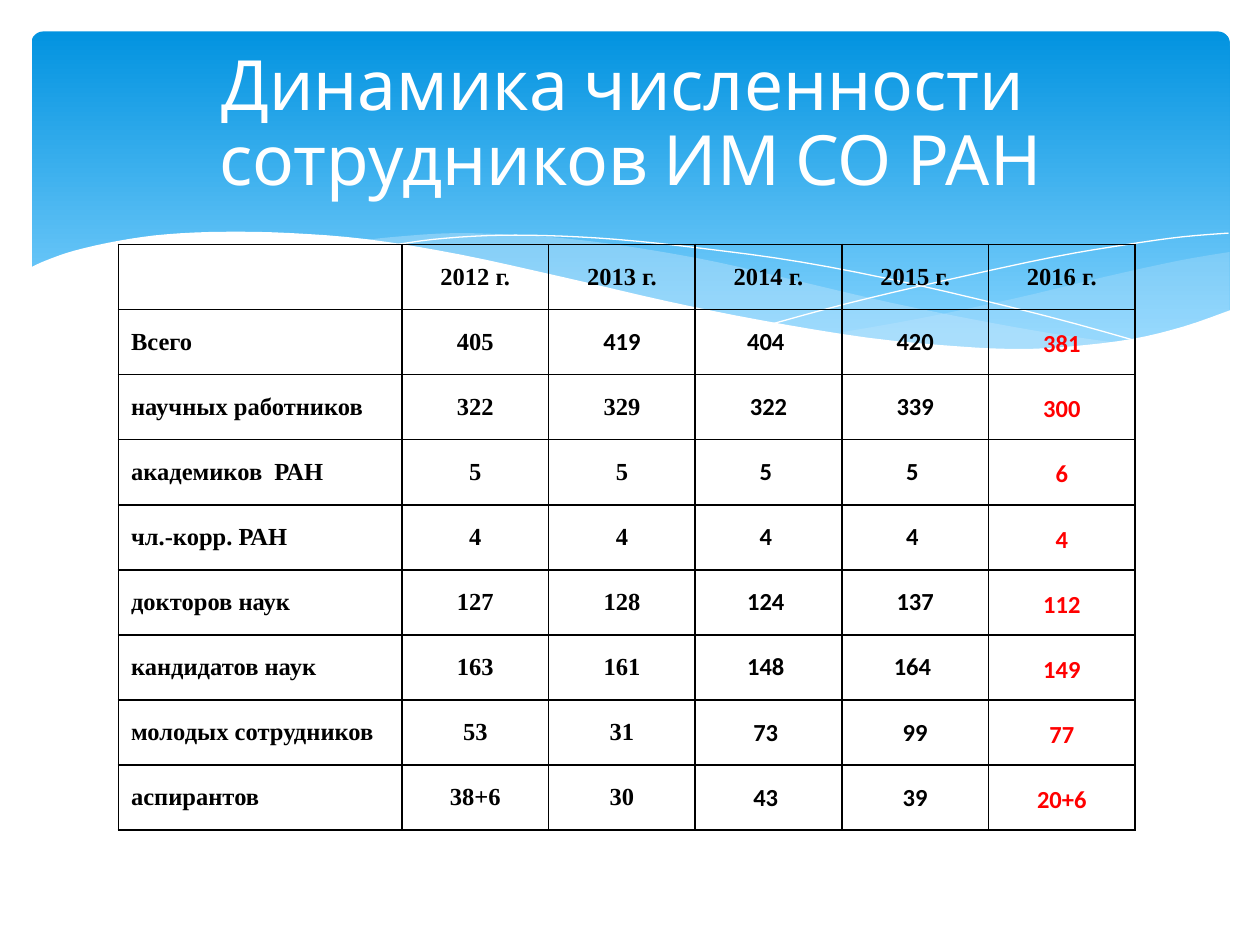
from dataclasses import dataclass

from lxml import etree
from pptx import Presentation
from pptx.dml.color import RGBColor
from pptx.enum.shapes import MSO_SHAPE
from pptx.enum.text import MSO_ANCHOR, PP_ALIGN
from pptx.oxml.ns import qn
from pptx.util import Inches, Pt


@dataclass(frozen=True)
class Theme:
    sky_top: str = "0293E0"
    sky_bottom: str = "83D3FE"
    wave: str = "C6E7FC"
    white: str = "FFFFFF"
    black: str = "000000"
    accent: str = "FF0000"
    title_font: str = "Cabin"
    label_font: str = "Times New Roman"
    value_font: str = "Calibri"
    title_size: float = 39.6
    table_size: float = 14


@dataclass(frozen=True)
class Box:
    left: float
    top: float
    width: float
    height: float

    def lengths(self):
        return [Inches(value) for value in (self.left, self.top, self.width, self.height)]


THEME = Theme()

# Knots of the smooth wave edges, in inches from the corner of the backdrop
RIGHT_WAVE = [
    [(9.76, 2), (9.35, 2.07), (8.76, 2.2), (8.05, 2.37), (7.29, 2.53), (6.61, 2.65)],
    [(6.61, 2.65), (7.19, 2.72), (7.69, 2.77), (8.24, 2.77), (8.72, 2.74),
     (9.21, 2.65), (9.49, 2.57), (9.76, 2.47)],
]
MIDDLE_WAVE = [
    [(8.93, 2.73), (8.37, 2.65), (7.75, 2.54), (7.06, 2.4), (6.29, 2.22), (5.69, 2.08),
     (5.14, 1.98), (4.65, 1.91), (4.2, 1.87), (3.61, 1.85), (3.13, 1.88), (2.86, 1.91)],
    [(2.86, 1.91), (3.42, 1.99), (4.04, 2.11), (4.91, 2.32), (5.66, 2.48), (6.34, 2.61),
     (6.95, 2.7), (7.48, 2.76), (8.07, 2.78), (8.57, 2.77), (8.93, 2.73)],
]
FALLING_LINE = [
    [(3.09, 1.95), (3.44, 1.9), (3.87, 1.87), (4.33, 1.87), (4.89, 1.9), (5.56, 1.97),
     (6.36, 2.08), (7.27, 2.26), (8.31, 2.51), (9.07, 2.72)],
]
RISING_LINE = [
    [(6.13, 2.57), (6.72, 2.41), (7.48, 2.23), (8.36, 2.04), (8.95, 1.94), (9.38, 1.88),
     (9.75, 1.85)],
]
WHITE_WAVE = [
    [(9.77, 2.46), (9.4, 2.59), (8.99, 2.69), (8.5, 2.75), (8.09, 2.77), (7.61, 2.75),
     (6.88, 2.68), (6.03, 2.54), (5.29, 2.39), (4.47, 2.2), (3.65, 2.02), (2.92, 1.9),
     (2.3, 1.85), (1.77, 1.84), (1.32, 1.86), (0.95, 1.91), (0.59, 1.99), (0.36, 2.07),
     (0.23, 2.13)],
    [(0.23, 3.29), (9.77, 3.29)],
]

HEADINGS = ["", "2012 г.", "2013 г.", "2014 г.", "2015 г.", "2016 г."]
STAFF = [
    ["Всего", "405", "419", "404 ", "420", "381"],
    ["научных работников", "322", "329", "322", "339", "300"],
    ["академиков  РАН", "5", "5", "5 ", "5 ", "6"],
    ["чл.-корр. РАН", "4", "4", "4 ", "4 ", "4"],
    ["докторов наук", "127", "128", "124 ", "137", "112"],
    ["кандидатов наук", "163", "161", "148 ", "164 ", "149"],
    ["молодых сотрудников", "53", "31", "73 ", "99", "77"],
    ["аспирантов", "38+6", "30", "43 ", "39", "20+6"],
]


def color(value):
    return RGBColor.from_string(value)


def write(text_frame, text, *, font, size, fill, bold=False,
          align=PP_ALIGN.CENTER, spacing=None):
    paragraph = text_frame.paragraphs[0]
    paragraph.text = text
    paragraph.alignment = align
    paragraph.line_spacing = spacing
    for run in paragraph.runs:
        run.font.name = font
        run.font.size = Pt(size)
        run.font.bold = bold
        run.font.color.rgb = color(fill)


def smooth(knots, steps=4):
    """Points of a Catmull-Rom curve through the knots."""
    padded = [knots[0], *knots, knots[-1]]
    points = [knots[0]]
    for a, b, c, d in zip(padded, padded[1:], padded[2:], padded[3:]):
        for step in range(1, steps + 1):
            t = step / steps
            points.append(tuple(
                0.5 * (2 * q + (r - p) * t + (2 * p - 5 * q + 4 * r - s) * t ** 2
                       + (3 * q - p - 3 * r + s) * t ** 3)
                for p, q, r, s in zip(a, b, c, d)))
    return points


def add_wave(slide, box, curves, *, fill=None, alpha=None, line=None):
    points = [(Inches(box.left + x), Inches(box.top + y))
              for knots in curves for x, y in smooth(knots)]
    builder = slide.shapes.build_freeform(*points[0])
    builder.add_line_segments(points[1:], close=fill is not None)
    shape = builder.convert_to_shape()
    shape.shadow.inherit = False
    if fill:
        shape.fill.solid()
        shape.fill.fore_color.rgb = color(fill)
    else:
        shape.fill.background()
    if alpha:
        tint = shape.fill._xPr.find(".//" + qn("a:srgbClr"))
        etree.SubElement(tint, qn("a:alpha"), val=str(alpha * 1000))
    if line:
        shape.line.color.rgb = color(line)
        shape.line.width = Pt(0)
    else:
        shape.line.fill.background()


def add_backdrop(slide, box):
    # Sky panel
    panel = Box(box.left + 0.25, box.top + 0.25, box.width - 0.49, 2.7)
    sky = slide.shapes.add_shape(MSO_SHAPE.ROUNDED_RECTANGLE, *panel.lengths())
    sky.adjustments[0] = 0.034
    sky.shadow.inherit = False
    sky.line.fill.background()
    sky.fill.gradient()
    sky.fill.gradient_angle = 270
    stops = [(0, THEME.sky_top), (0.9, THEME.sky_bottom)]
    for stop, (position, tone) in zip(sky.fill.gradient_stops, stops):
        stop.position = position
        stop.color.rgb = color(tone)

    # Waves, from back to front
    add_wave(slide, box, RIGHT_WAVE, fill=THEME.wave, alpha=29)
    add_wave(slide, box, MIDDLE_WAVE, fill=THEME.wave, alpha=40)
    add_wave(slide, box, FALLING_LINE, line=THEME.white)
    add_wave(slide, box, RISING_LINE, line=THEME.white)
    add_wave(slide, box, WHITE_WAVE, fill=THEME.white)


def add_title(slide, box):
    text_frame = slide.shapes.add_textbox(*box.lengths()).text_frame
    text_frame.word_wrap = True
    text_frame.vertical_anchor = MSO_ANCHOR.MIDDLE
    write(text_frame, "Динамика численности \vсотрудников ИМ СО РАН",
          font=THEME.title_font, size=THEME.title_size, fill=THEME.white, spacing=0.9)


def add_borders(cell):
    properties = cell._tc.get_or_add_tcPr()
    for side in ("a:lnL", "a:lnR", "a:lnT", "a:lnB"):
        border = etree.SubElement(properties, qn(side), w=str(Pt(1)))
        solid = etree.SubElement(border, qn("a:solidFill"))
        etree.SubElement(solid, qn("a:srgbClr"), val=THEME.black)


def add_staff_table(slide, box):
    rows = [HEADINGS, *STAFF]
    table = slide.shapes.add_table(len(rows), len(HEADINGS), *box.lengths()).table
    table.first_row = table.horz_banding = False
    label_width = 2.25
    year_width = (box.width - label_width) / (len(HEADINGS) - 1)
    for index, column in enumerate(table.columns):
        column.width = Inches(year_width if index else label_width)
    for row in table.rows:
        row.height = Inches(box.height / len(rows))

    for r, values in enumerate(rows):
        for c, text in enumerate(values):
            cell = table.cell(r, c)
            add_borders(cell)
            cell.fill.background()
            cell.vertical_anchor = MSO_ANCHOR.MIDDLE
            roomy = c in (0, 3)
            cell.margin_left = cell.margin_right = Inches(0.1 if roomy else 0)
            cell.margin_top = cell.margin_bottom = Inches(0.05 if roomy else 0)
            latest = r > 0 and c == 5
            sans = r > 0 and (c >= 3 or (r, c) == (1, 2))
            write(cell.text_frame, text, size=THEME.table_size, bold=True,
                  font=THEME.value_font if sans else THEME.label_font,
                  fill=THEME.accent if latest else THEME.black,
                  align=PP_ALIGN.CENTER if c else PP_ALIGN.LEFT,
                  spacing=1.15 if latest else None)


def main():
    presentation = Presentation()
    presentation.slide_width, presentation.slide_height = Inches(10), Inches(7.5)
    slide = presentation.slides.add_slide(presentation.slide_layouts[6])
    add_backdrop(slide, Box(0, 0, 10, 7.5))
    add_title(slide, Box(0.63, 0.33, 8.75, 1.33))
    add_staff_table(slide, Box(0.94, 1.94, 8.07, 4.65))
    presentation.save("out.pptx")


if __name__ == "__main__":
    main()
